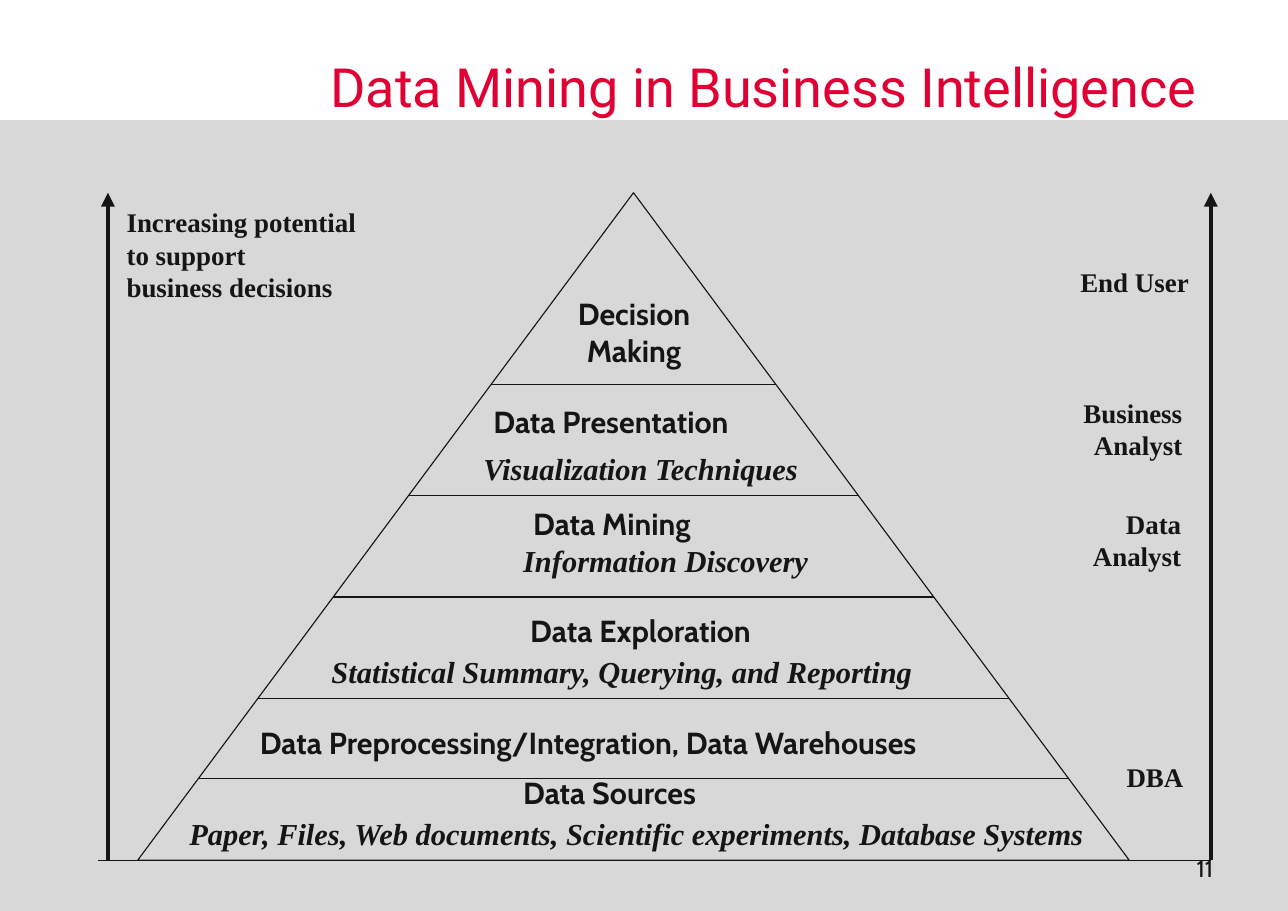
import pptx
import pptx.util
import pptx.dml.color
import pptx.oxml
import pptx.oxml.ns
import pptx.enum.shapes
import pptx.enum.text

PX = 9144  # one px is a hundredth of an inch
COLORS = {"ink": "151515", "title": "E00034", "panel": "D8D8D8"}
SERIF, SANS, TITLE_FONT = "Times New Roman", "Cabin", "Roboto"
ALIGN = pptx.enum.text.PP_ALIGN
SHAPES = pptx.enum.shapes.MSO_SHAPE

# Content: lines, (left, top, width, height), alignment
TITLE = "Data Mining in Business Intelligence"
PAGE_NUMBER = "11"
SIDE_LABELS = [
    (["Increasing potential", "to support", "business decisions"], (105, 182, 231, 99), ALIGN.LEFT),
    (["End User"], (969, 236, 120, 40), ALIGN.RIGHT),
    (["Business", "Analyst"], (971, 355, 112, 69), ALIGN.RIGHT),
    (["Data", "Analyst"], (980, 456, 102, 69), ALIGN.RIGHT),
    (["DBA"], (1012, 686, 72, 40), ALIGN.RIGHT),
]
LEVELS = [
    (["Decision Making"], (502, 263, 147, 77), ALIGN.CENTER),
    (["Data Presentation"], (438, 361, 273, 44), ALIGN.LEFT),
    (["Data Mining"], (474, 454, 215, 44), ALIGN.LEFT),
    (["Data Exploration"], (440, 551, 283, 44), ALIGN.CENTER),
    (["Data Preprocessing/Integration, Data Warehouses"], (226, 652, 732, 44), ALIGN.LEFT),
    (["Data Sources"], (465, 698, 205, 44), ALIGN.LEFT),
]
TECHNIQUES = [
    (["Visualization Techniques"], (429, 404, 307, 44), ALIGN.LEFT),
    (["Information Discovery"], (465, 487, 280, 44), ALIGN.LEFT),
    (["Statistical Summary, Querying, and Reporting"], (291, 588, 551, 44), ALIGN.LEFT),
    (["Paper, Files, Web documents, Scientific experiments, Database Systems"],
     (162, 735, 858, 44), ALIGN.LEFT),
]
APEX_X, APEX_Y, BASE_Y, HALF_BASE = 575, 175, 781, 450
DIVIDERS = [349, 450, 542, 634, 707]
AXES = [98, 1099]
BASELINE = (89, 1099)


def px(*lengths):
    return [round(length * PX) for length in lengths]


def color(name):
    return pptx.dml.color.RGBColor.from_string(COLORS[name])


def add_run(paragraph, text, font, size, ink="ink", bold=False, italic=False):
    run = paragraph.add_run()
    run.text = text
    run.font.name, run.font.size = font, pptx.util.Pt(size)
    run.font.bold, run.font.italic = bold, italic
    run.font.color.rgb = color(ink)


def add_label(lines, box, align, font, size, **style):
    frame = slide.shapes.add_textbox(*px(*box)).text_frame
    frame.word_wrap = True
    for index, line in enumerate(lines):
        paragraph = frame.add_paragraph() if index else frame.paragraphs[0]
        paragraph.alignment = align
        add_run(paragraph, line, font, size, **style)
    return frame


def add_line(x1, y1, x2, y2, width=0.75, arrow=False):
    line = slide.shapes.add_connector(
        pptx.enum.shapes.MSO_CONNECTOR.STRAIGHT, *px(x1, y1, x2, y2))
    line.line.color.rgb = color("ink")
    line.line.width = pptx.util.Pt(width)
    properties = line.line._get_or_add_ln()
    if arrow:
        head = pptx.oxml.parse_xml(
            '<a:tailEnd %s type="triangle"/>' % pptx.oxml.ns.nsdecls("a"))
        properties.append(head)
    properties.addnext(pptx.oxml.parse_xml(
        "<a:effectLst %s/>" % pptx.oxml.ns.nsdecls("a")))


deck = pptx.Presentation()
deck.slide_width, deck.slide_height = px(1169, 827)
slide = deck.slides.add_slide(deck.slide_layouts[5])

# Title
title = slide.shapes.title
title.left, title.top, title.width, title.height = px(61, 46, 1047, 64)
heading = title.text_frame
heading.word_wrap = True
heading.auto_size = pptx.enum.text.MSO_AUTO_SIZE.NONE
heading.vertical_anchor = pptx.enum.text.MSO_ANCHOR.MIDDLE
heading.margin_left, heading.margin_top, heading.margin_right, heading.margin_bottom = px(11, 6, 22, 6)
heading.paragraphs[0].alignment = ALIGN.RIGHT
add_run(heading.paragraphs[0], TITLE, TITLE_FONT, 35.3, ink="title")

# Grey panel
panel = slide.shapes.add_shape(SHAPES.RECTANGLE, *px(0, 109, 1169, 718))
panel.shadow.inherit = False
panel.fill.solid()
panel.fill.fore_color.rgb = color("panel")
panel.line.fill.background()

# Pyramid, with dividers reaching its sloping sides
pyramid = slide.shapes.add_shape(
    SHAPES.FLOWCHART_EXTRACT,
    *px(APEX_X - HALF_BASE, APEX_Y, 2 * HALF_BASE, BASE_Y - APEX_Y))
pyramid.shadow.inherit = False
pyramid.fill.background()
pyramid.line.color.rgb = color("ink")
pyramid.line.width = pptx.util.Pt(0.75)
for y in DIVIDERS:
    reach = HALF_BASE * (y - APEX_Y) / (BASE_Y - APEX_Y)
    add_line(APEX_X - reach, y, APEX_X + reach, y)

# Baseline and upward arrows
add_line(BASELINE[0], BASE_Y, BASELINE[1], BASE_Y)
for x in AXES:
    add_line(x, BASE_Y, x, APEX_Y, width=3, arrow=True)

# Labels
for label in SIDE_LABELS:
    add_label(*label, SERIF, 17.6, bold=True)
for label in LEVELS:
    add_label(*label, SANS, 19.9, bold=True)
for label in TECHNIQUES:
    add_label(*label, SERIF, 19.9, bold=True, italic=True)

# Page number
footer = add_label([PAGE_NUMBER], (838, 766, 273, 44), ALIGN.RIGHT, SANS, 15.4)
footer.vertical_anchor = pptx.enum.text.MSO_ANCHOR.MIDDLE

deck.save("out.pptx")
